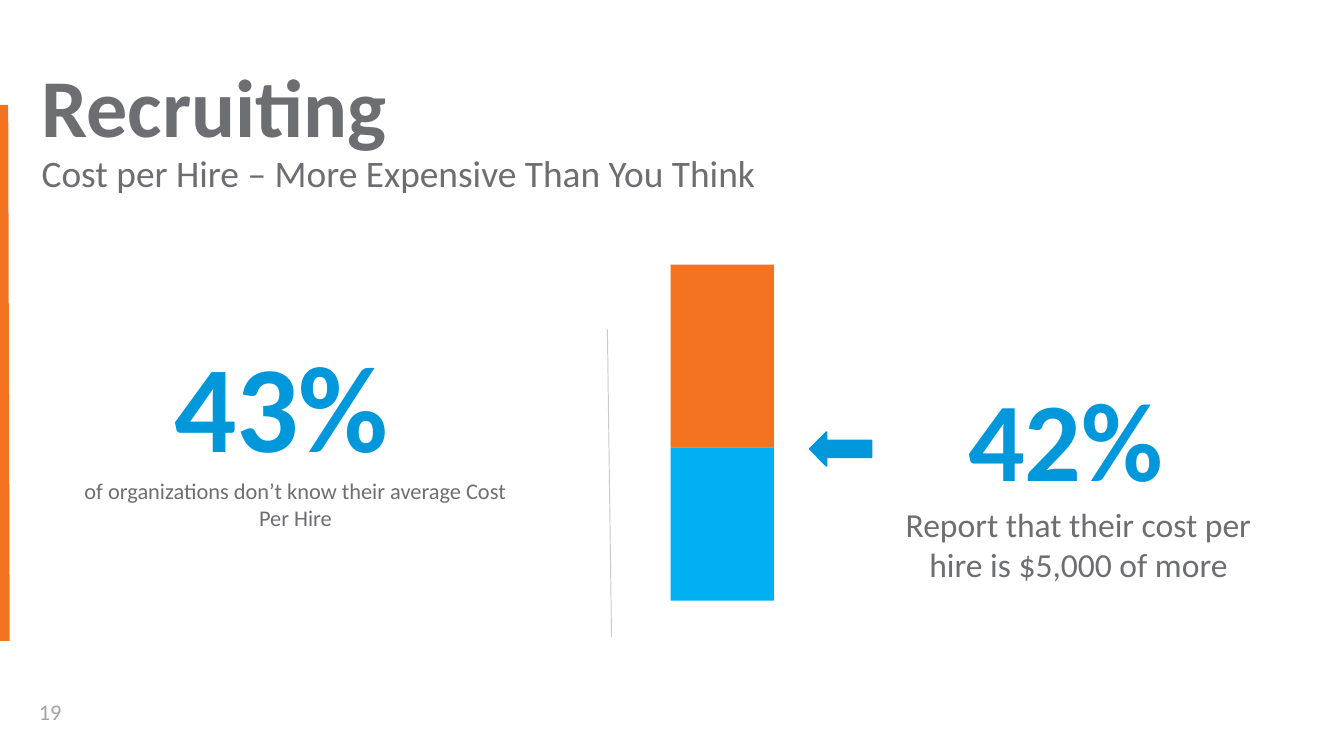
from dataclasses import dataclass

from lxml.etree import SubElement
from pptx import Presentation
from pptx.dml.color import RGBColor
from pptx.enum.shapes import MSO_CONNECTOR, MSO_SHAPE
from pptx.enum.text import MSO_ANCHOR, MSO_AUTO_SIZE, PP_ALIGN
from pptx.oxml.ns import qn
from pptx.slide import Slide
from pptx.util import Pt


@dataclass(frozen=True)
class Theme:
    """Colours, type face and type sizes of the deck."""
    font: str = "Calibri"
    grey: str = "6D6E71"
    pale: str = "A3A3A5"
    rule: str = "C9CACB"
    orange: str = "F37320"
    blue: str = "0098DB"
    sky: str = "00B0F0"
    title: float = 44
    subtitle: float = 20
    small: float = 12


THEME = Theme()


@dataclass(frozen=True)
class Area:
    """A rectangle in points."""
    left: float
    top: float
    width: float
    height: float

    def lengths(self) -> tuple:
        """Return the four lengths for python-pptx."""
        return Pt(self.left), Pt(self.top), Pt(self.width), Pt(self.height)


@dataclass(frozen=True)
class Span:
    """Text with one look."""
    text: str
    size: float
    color: str
    bold: bool = False


@dataclass(frozen=True)
class Statistic:
    """A large figure with its caption below."""
    area: Area
    figure: Span
    caption: Span


@dataclass(frozen=True)
class Block:
    """A filled preset shape."""
    kind: MSO_SHAPE
    area: Area
    color: str
    outline: float = 0


@dataclass(frozen=True)
class Rule:
    """A straight line between two points."""
    start: tuple[float, float]
    end: tuple[float, float]
    color: str
    width: float


def apply(target, values: dict) -> None:
    """Set each named attribute on the target."""
    for name, value in values.items():
        setattr(target, name, value)


def add_span(para, span: Span) -> None:
    """Append a formatted run to a paragraph."""
    run = para.add_run()
    run.text = span.text
    apply(run.font, {"name": THEME.font, "size": Pt(span.size), "bold": span.bold})
    run.font.color.rgb = RGBColor.from_string(span.color)


def add_title(page: Slide, area: Area, heading: Span, subheading: Span) -> None:
    """Place the heading and subheading in the title placeholder."""
    box = page.shapes.title
    apply(box, dict(zip(("left", "top", "width", "height"), area.lengths())))
    apply(box.text_frame, {"word_wrap": True, "auto_size": MSO_AUTO_SIZE.NONE,
                           "vertical_anchor": MSO_ANCHOR.TOP, "margin_left": Pt(5)})
    para = box.text_frame.paragraphs[0]
    apply(para, {"alignment": PP_ALIGN.LEFT, "line_spacing": 0.9})
    add_span(para, heading)
    para.add_line_break()
    add_span(para, subheading)


def add_text(page: Slide, area: Area, spans: list[Span], align: PP_ALIGN,
             anchor: MSO_ANCHOR = MSO_ANCHOR.TOP) -> None:
    """Add a text box with one paragraph for each span."""
    frame = page.shapes.add_textbox(*area.lengths()).text_frame
    apply(frame, {"word_wrap": True, "vertical_anchor": anchor})
    for index, span in enumerate(spans):
        para = frame.add_paragraph() if index else frame.paragraphs[0]
        para.alignment = align
        add_span(para, span)


def add_block(page: Slide, block: Block) -> None:
    """Draw a filled shape, outlined if it has an outline width."""
    shape = page.shapes.add_shape(block.kind, *block.area.lengths())
    shape.shadow.inherit = False
    color = RGBColor.from_string(block.color)
    shape.fill.solid()
    shape.fill.fore_color.rgb = color
    if block.outline:
        shape.line.color.rgb = color
        shape.line.width = Pt(block.outline)
    else:
        shape.line.fill.background()


def add_rule(page: Slide, rule: Rule) -> None:
    """Draw a straight line without shadow."""
    ends = [Pt(length) for length in (*rule.start, *rule.end)]
    line = page.shapes.add_connector(MSO_CONNECTOR.STRAIGHT, *ends)
    line.line.color.rgb = RGBColor.from_string(rule.color)
    line.line.width = Pt(rule.width)
    SubElement(line.element.spPr, qn("a:effectLst"))


def main() -> None:
    """Build the recruiting slide."""
    deck = Presentation()
    apply(deck, {"slide_width": Pt(720), "slide_height": Pt(405)})
    page = deck.slides.add_slide(deck.slide_layouts[5])

    add_rule(page, Rule((1.4, 56.2), (2.2, 343.4), THEME.orange, 6))
    add_text(page, Area(13.7, 370.8, 43.9, 20.9), [Span("19", THEME.small, THEME.pale)],
             PP_ALIGN.LEFT, MSO_ANCHOR.MIDDLE)
    add_title(page, Area(17.3, 32, 520.6, 54),
              Span("Recruiting", THEME.title, THEME.grey, True),
              Span("Cost per Hire – More Expensive Than You Think",
                   THEME.subtitle, THEME.grey))

    statistics = [
        Statistic(Area(37.4, 172.8, 241.9, 116.6), Span("43% ", 66, THEME.blue, True),
                  Span("of organizations don’t know their average Cost Per Hire",
                       THEME.small, THEME.grey)),
        Statistic(Area(464.4, 194.4, 226.8, 123.8), Span("42% ", 60, THEME.blue, True),
                  Span("Report that their cost per hire is $5,000 of more",
                       18, THEME.grey)),
    ]
    for item in statistics:
        add_text(page, item.area, [item.figure, item.caption], PP_ALIGN.CENTER)

    add_rule(page, Rule((325.4, 176.4), (327.6, 341.3), THEME.rule, 0.5))

    top = 141.8
    for height, color in ((97.9, THEME.orange), (82.1, THEME.sky)):
        add_block(page, Block(MSO_SHAPE.RECTANGLE, Area(359.3, top, 55.4, height), color))
        top += height
    add_block(page, Block(MSO_SHAPE.LEFT_ARROW, Area(433.8, 231.5, 33.1, 18),
                          THEME.blue, 1))
    deck.save("out.pptx")


if __name__ == "__main__":
    main()
